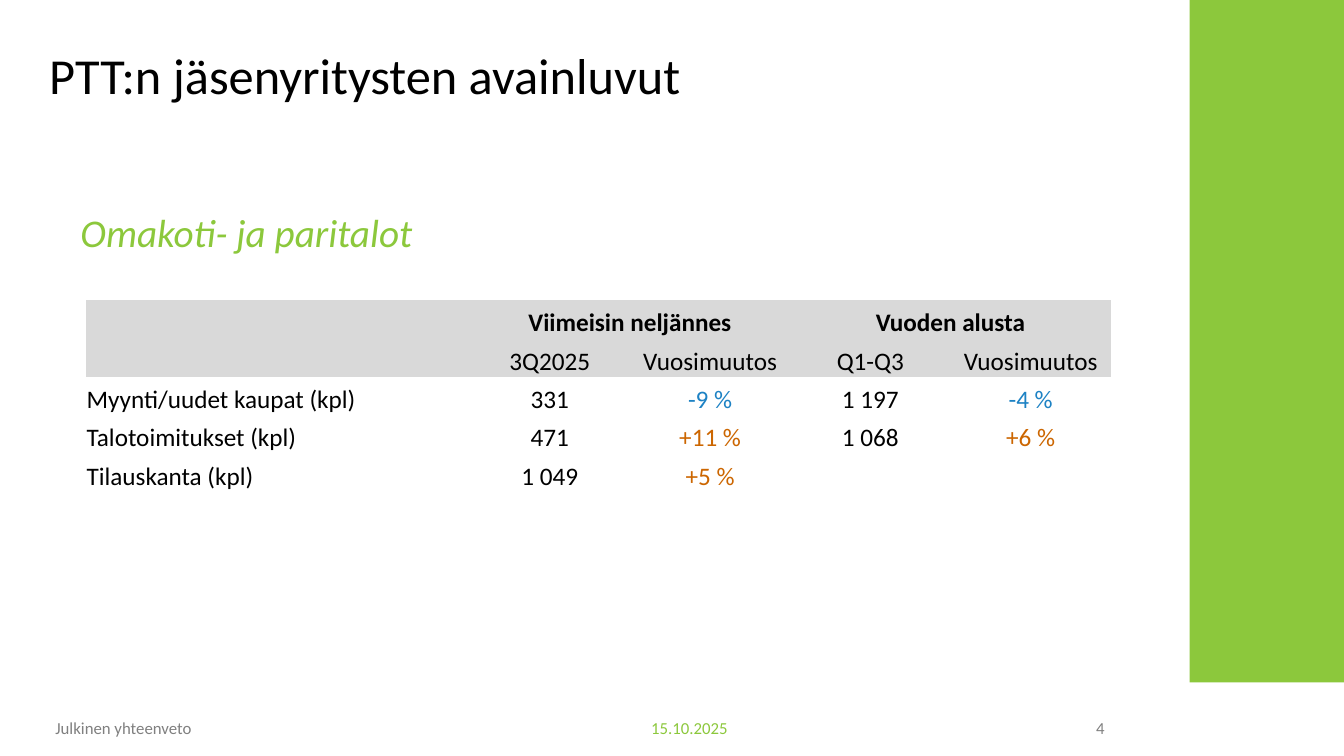
from dataclasses import dataclass

import pptx
import pptx.dml.color
import pptx.enum.shapes
import pptx.enum.text
import pptx.oxml.ns
import pptx.util

Pt = pptx.util.Pt
ALIGN = pptx.enum.text.PP_ALIGN
FONT = "Calibri"
COLORS = {
    "green": "8CC83C",
    "black": "000000",
    "gray": "808080",
    "header": "D9D9D9",
    "fall": "1D82C4",
    "rise": "CC6600",
}
PLAIN_TABLE_STYLE = "{2D5ABB26-0587-4C30-8999-92F81FD0307C}"


@dataclass
class Label:
    text: str
    left: float
    top: float
    width: float
    height: float
    size: float
    color: str
    align: ALIGN = ALIGN.LEFT
    italic: bool = False
    right_inset: float = 7.2


LABELS = [
    Label("PTT:n jäsenyritysten avainluvut", 28.1, 28.1, 819.4, 62.6, 36, "black"),
    Label("Omakoti- ja paritalot", 50.4, 145.4, 774.7, 35.3, 28, "green", italic=True),
    Label("15.10.2025", 298.8, 509, 226.8, 17.3, 12, "green", ALIGN.RIGHT, right_inset=5.8),
    Label("4", 571, 509, 223.9, 17.3, 12, "gray", ALIGN.RIGHT, right_inset=5.8),
    Label("Julkinen yhteenveto", 32.4, 509, 226.8, 17.3, 12, "gray", right_inset=5.8),
]

KEY_FIGURES = [
    ["", "", "", "", ""],
    ["", "Viimeisin neljännes", "", "Vuoden alusta", ""],
    ["", "3Q2025", "Vuosimuutos", "Q1-Q3", "Vuosimuutos"],
    ["Myynti/uudet kaupat (kpl)", "331", "-9 %", "1 197", "-4 %"],
    ["Talotoimitukset (kpl)", "471", "+11 %", "1 068", "+6 %"],
    ["Tilauskanta (kpl)", "1 049", "+5 %", "", ""],
]
PERIOD_ROW = 1
HEADER_ROWS = (1, 2)
MERGES = [(0, 0, 2), (PERIOD_ROW, 1, 2), (PERIOD_ROW, 3, 4)]  # row, first and last column
COLUMN_WIDTHS = [274.3] + [114.5] * 4
ROW_HEIGHTS = [30.2] + [27.4] * 5


def rgb(name: str) -> pptx.dml.color.RGBColor:
    return pptx.dml.color.RGBColor.from_string(COLORS[name])


def write(frame, text: str, size: float, color: str, align: ALIGN,
          bold: bool = False, italic: bool = False) -> None:
    frame.text = text
    paragraph = frame.paragraphs[0]
    paragraph.alignment = align
    for run in paragraph.runs:
        run.font.name = FONT
        run.font.size = Pt(size)
        run.font.bold = bold
        run.font.italic = italic
        run.font.color.rgb = rgb(color)


def add_label(slide, label: Label) -> None:
    box = slide.shapes.add_textbox(
        Pt(label.left), Pt(label.top), Pt(label.width), Pt(label.height))
    frame = box.text_frame
    frame.word_wrap = True
    frame.margin_right = Pt(label.right_inset)
    write(frame, label.text, label.size, label.color, label.align, italic=label.italic)


def change_color(text: str) -> str:
    return {"-": "fall", "+": "rise"}.get(text[:1], "black")


def add_key_figures(slide) -> None:
    graphic = slide.shapes.add_table(
        len(ROW_HEIGHTS), len(COLUMN_WIDTHS), Pt(61.2), Pt(184.3),
        Pt(sum(COLUMN_WIDTHS)), Pt(sum(ROW_HEIGHTS)))
    for style in graphic.element.iter(pptx.oxml.ns.qn("a:tableStyleId")):
        style.text = PLAIN_TABLE_STYLE
    table = graphic.table
    table.first_row = table.horz_banding = False
    for column, width in zip(table.columns, COLUMN_WIDTHS):
        column.width = Pt(width)
    for row, height in zip(table.rows, ROW_HEIGHTS):
        row.height = Pt(height)
    for row, first, last in MERGES:
        table.cell(row, first).merge(table.cell(row, last))

    for row, values in enumerate(KEY_FIGURES):
        for column, value in enumerate(values):
            cell = table.cell(row, column)
            cell.margin_left = cell.margin_right = cell.margin_top = Pt(0.7)
            cell.margin_bottom = Pt(0)
            cell.vertical_anchor = pptx.enum.text.MSO_ANCHOR.BOTTOM
            if row in HEADER_ROWS:
                cell.fill.solid()
                cell.fill.fore_color.rgb = rgb("header")
            else:
                cell.fill.background()
            if value:
                write(cell.text_frame, value, 18, change_color(value),
                      ALIGN.CENTER if column else ALIGN.LEFT, bold=row == PERIOD_ROW)


def main() -> None:
    presentation = pptx.Presentation()
    presentation.slide_width = Pt(960)
    presentation.slide_height = Pt(540)
    slide = presentation.slides.add_slide(presentation.slide_layouts[6])

    # Green side band
    band = slide.shapes.add_shape(
        pptx.enum.shapes.MSO_SHAPE.RECTANGLE, Pt(849.8), Pt(0), Pt(110.2), Pt(487.4))
    band.shadow.inherit = False
    band.fill.solid()
    band.fill.fore_color.rgb = rgb("green")
    band.line.fill.background()

    # Title, subtitle and footer
    for label in LABELS:
        add_label(slide, label)

    # Key figures
    add_key_figures(slide)

    presentation.save("out.pptx")


if __name__ == "__main__":
    main()
